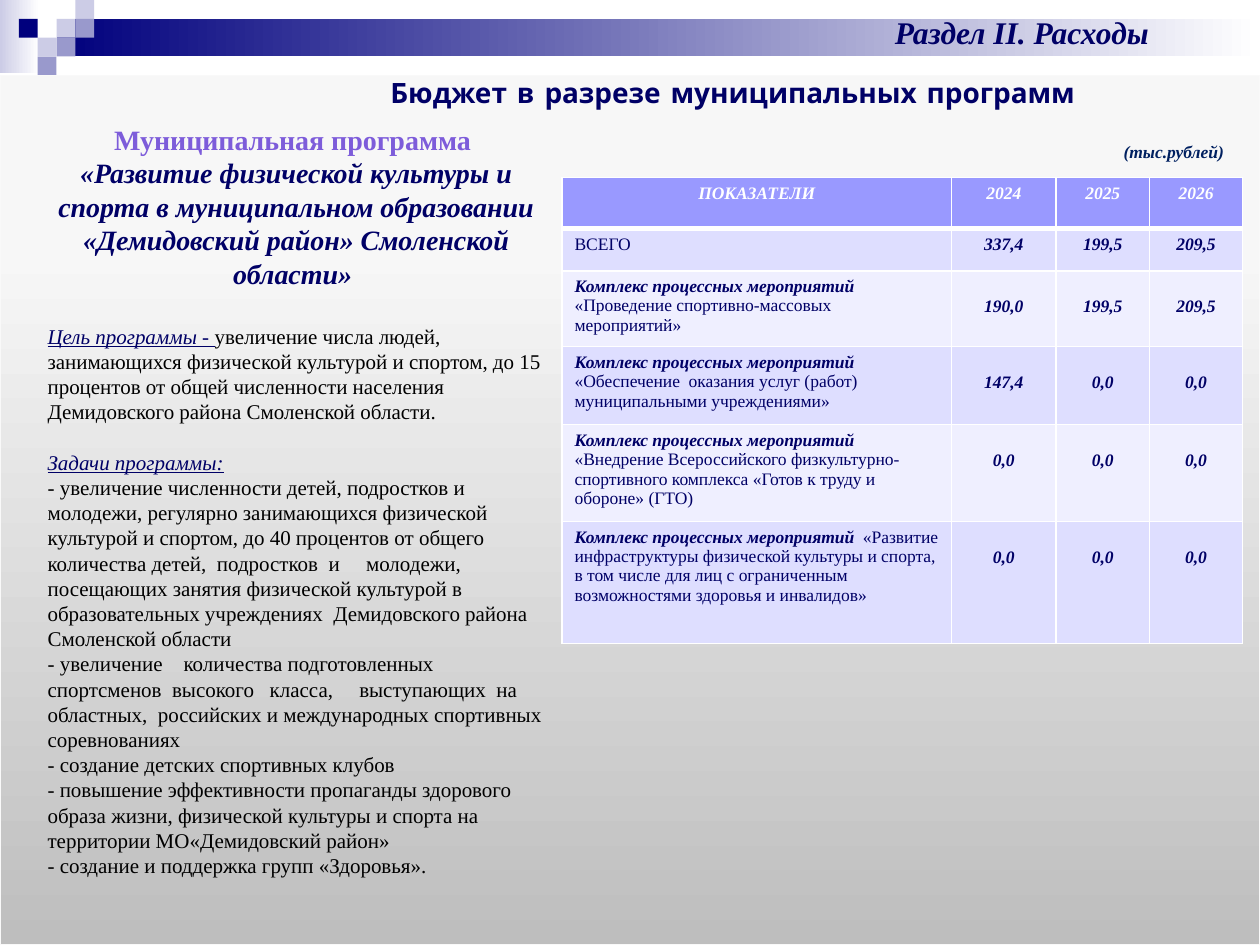
from dataclasses import dataclass

import pptx
import pptx.dml.color
import pptx.enum.shapes
import pptx.enum.text
import pptx.oxml
import pptx.oxml.ns
import pptx.util
from pptx.util import Cm

CENTER = pptx.enum.text.PP_ALIGN.CENTER
LEFT = pptx.enum.text.PP_ALIGN.LEFT
SHAPES = pptx.enum.shapes.MSO_SHAPE


@dataclass(frozen=True)
class Theme:
    serif: str = "Times New Roman"
    heading_font: str = "Comic Neue"
    navy: str = "00007D"
    ink: str = "000066"
    units: str = "002060"
    violet: str = "7D5CDA"
    black: str = "000000"
    white: str = "FFFFFF"
    lilac: str = "CCCCE6"
    mauve: str = "9999CC"
    panel_low: str = "BEBEBE"
    panel_high: str = "F7F7F7"
    panel_edge: str = "F9F9F9"
    header: str = "9999FF"
    bands: tuple = ("DEDEFF", "EFEFFF")
    section_size: int = 18
    title_size: int = 16
    body_size: int = 12
    table_size: int = 10


def rgb(color):
    return pptx.dml.color.RGBColor.from_string(color)


class ProgramSlide:
    def __init__(self, slide, theme):
        self.slide = slide
        self.theme = theme

    def style(self, font, size=None, color=None, bold=None, italic=None,
              underline=None, face=None):
        if size:
            font.size = pptx.util.Pt(size)
            font.name = face or self.theme.serif
        if color:
            font.color.rgb = rgb(color)
        font.bold, font.italic, font.underline = bold, italic, underline

    def box(self, left, top, width, height, fill, angle=0, stop=1.0,
            kind=SHAPES.RECTANGLE, edge=None):
        """Draw a plain shape; a pair of colours as fill makes a gradient."""
        shape = self.slide.shapes.add_shape(
            kind, Cm(left), Cm(top), Cm(width), Cm(height))
        shape.shadow.inherit = False
        if isinstance(fill, tuple):
            shape.fill.gradient()
            shape.fill.gradient_angle = angle
            for gradient_stop, color, position in zip(
                    shape.fill.gradient_stops, fill, (0, stop)):
                gradient_stop.color.rgb = rgb(color)
                gradient_stop.position = position
        else:
            shape.fill.solid()
            shape.fill.fore_color.rgb = rgb(fill)
        if edge:
            shape.line.color.rgb = rgb(edge)
            shape.line.width = pptx.util.Pt(0.75)
        else:
            shape.line.fill.background()

    def text(self, left, top, width, height, paragraphs, wrap=True):
        """Each paragraph: runs of (wording, overrides), font, align, space before."""
        frame = self.slide.shapes.add_textbox(
            Cm(left), Cm(top), Cm(width), Cm(height)).text_frame
        frame.word_wrap = wrap
        for index, (runs, font, align, gap) in enumerate(paragraphs):
            paragraph = frame.add_paragraph() if index else frame.paragraphs[0]
            self.fill_paragraph(paragraph, runs, font, align)
            paragraph.space_before = pptx.util.Pt(gap)

    def fill_paragraph(self, paragraph, runs, font, align):
        paragraph.alignment = align
        self.style(paragraph.font, **font)
        for wording, overrides in runs:
            run = paragraph.add_run()
            run.text = wording
            if len(runs) > 1:
                self.style(run.font, **{**font, **overrides})

    def borders(self, cell, bottom):
        properties = cell._tc.get_or_add_tcPr()
        widths = {"lnL": 1, "lnR": 1, "lnT": 1, "lnB": bottom}
        for index, (side, width) in enumerate(widths.items()):
            properties.insert(index, pptx.oxml.parse_xml(
                f'<a:{side} {pptx.oxml.ns.nsdecls("a")} w="{width * 12700}">'
                f'<a:solidFill><a:srgbClr val="{self.theme.white}"/></a:solidFill>'
                f'</a:{side}>'))

    def table(self, left, top, widths, heights, rows):
        theme = self.theme
        grid = self.slide.shapes.add_table(
            len(rows), len(widths), Cm(left), Cm(top),
            Cm(sum(widths)), Cm(sum(heights))).table
        for column, width in zip(grid.columns, widths):
            column.width = Cm(width)
        for r, (name, detail, *values) in enumerate(rows):
            grid.rows[r].height = Cm(heights[r])
            is_header = r == 0
            strong = dict(size=theme.table_size, bold=True, italic=True,
                          color=theme.white if is_header else theme.ink)
            plain = {**strong, "bold": False, "italic": False}
            for c, value in enumerate([name, *values]):
                cell = grid.cell(r, c)
                cell.fill.solid()
                cell.fill.fore_color.rgb = rgb(
                    theme.header if is_header else theme.bands[(r - 1) % 2])
                self.borders(cell, 3 if is_header else 1)
                runs, font = [(value, {})], strong
                if c == 0 and detail:
                    runs.append((detail, plain))
                elif c == 0 and not is_header:
                    font = plain
                elif detail:
                    cell.margin_top = Cm(0.53)
                self.fill_paragraph(cell.text_frame.paragraphs[0], runs, font,
                                    CENTER if c or is_header else LEFT)


def draw_banner(page):
    theme = page.theme
    page.box(0, 0, 0.79, 1.47, (theme.lilac, theme.white))
    page.box(1.14, 0.38, 24.26, 0.76, (theme.navy, theme.white))
    unit = 0.38
    for column, row, color in [
            (3, 1, theme.lilac), (4, 0, theme.lilac), (4, 1, theme.mauve),
            (2, 2, theme.lilac), (1, 1, theme.navy), (3, 2, theme.mauve),
            (2, 3, theme.mauve)]:
        page.box(column * unit, row * unit, unit, unit, color)
    page.box(0, 1.52, 25.4, 17.53, (theme.panel_low, theme.panel_high),
             angle=90, stop=0.8, kind=SHAPES.FLOWCHART_PROCESS,
             edge=theme.panel_edge)


def draw_program(page):
    theme = page.theme
    title = dict(size=theme.title_size, color=theme.ink, bold=True, italic=True)
    body = dict(size=theme.body_size, color=theme.black)
    label = dict(size=theme.body_size, color=theme.ink, italic=True, underline=True)
    tasks = [
        "- увеличение численности детей, подростков и молодежи, регулярно занимающихся физической культурой и спортом, до 40 процентов от общего количества детей,  подростков  и     молодежи, посещающих занятия физической культурой в образовательных учреждениях  Демидовского района Смоленской области",
        "- увеличение    количества подготовленных спортсменов  высокого   класса,     выступающих  на областных,  российских и международных спортивных соревнованиях",
        "- создание детских спортивных клубов",
        "- повышение эффективности пропаганды здорового образа жизни, физической культуры и спорта на территории МО«Демидовский район»",
        "- создание и поддержка групп «Здоровья».",
    ]
    goal = "увеличение числа людей, занимающихся физической культурой и спортом, до 15 процентов от общей численности населения Демидовского района Смоленской области."
    page.text(0.71, 2.34, 10.52, 16.41, [
        ([("Муниципальная программа ", {})],
         {**title, "color": theme.violet, "italic": False}, CENTER, 0),
        ([("«Развитие физической культуры и спорта в муниципальном образовании «Демидовский район» Смоленской области» ", {})],
         title, CENTER, 0),
        ([("Цель программы - ", label), (goal, {})], body, LEFT, 19),
        ([("Задачи программы:", {})], label, LEFT, 14.4),
        *[([(task, {})], body, LEFT, 0) for task in tasks],
    ])


def draw_headings(page):
    theme = page.theme
    page.text(15.9, 0.13, 9.4, 1.02, [
        ([("Раздел II. Расходы", {})],
         dict(size=theme.section_size, color=theme.ink, bold=True, italic=True),
         CENTER, 0)])
    page.text(4.5, 1.4, 20.55, 0.94, [
        ([("Бюджет в разрезе муниципальных программ", {})],
         dict(size=theme.title_size, color=theme.ink, bold=True,
              face=theme.heading_font), CENTER, 0)])


def draw_budget(page):
    theme = page.theme
    measures = "Комплекс процессных мероприятий "
    page.table(11.33, 3.58, [7.85, 2.11, 1.88, 1.88],
               [1.02, 0.86, 1.53, 1.57, 1.95, 2.46], [
        ("ПОКАЗАТЕЛИ", "", "2024", "2025", "2026"),
        ("ВСЕГО", "", "337,4", "199,5", "209,5"),
        (measures, "«Проведение спортивно-массовых мероприятий»",
         "190,0", "199,5", "209,5"),
        (measures, "«Обеспечение  оказания услуг (работ) муниципальными учреждениями»",
         "147,4", "0,0", "0,0"),
        (measures, "«Внедрение Всероссийского физкультурно-спортивного комплекса «Готов к труду и обороне» (ГТО)",
         "0,0", "0,0", "0,0"),
        (measures + " ", "«Развитие инфраструктуры физической культуры и спорта, в том числе для лиц с ограниченным возможностями здоровья и инвалидов»",
         "0,0", "0,0", "0,0"),
    ])
    page.text(22.4, 2.72, 2.59, 0.69, [
        ([("(тыс.рублей)", {})],
         dict(size=theme.table_size, color=theme.units, bold=True, italic=True),
         LEFT, 0)], wrap=False)


def main():
    deck = pptx.Presentation()
    deck.slide_width, deck.slide_height = Cm(25.4), Cm(19.05)
    page = ProgramSlide(deck.slides.add_slide(deck.slide_layouts[6]), Theme())
    for draw in (draw_banner, draw_program, draw_headings, draw_budget):
        draw(page)
    deck.save("out.pptx")


if __name__ == "__main__":
    main()
